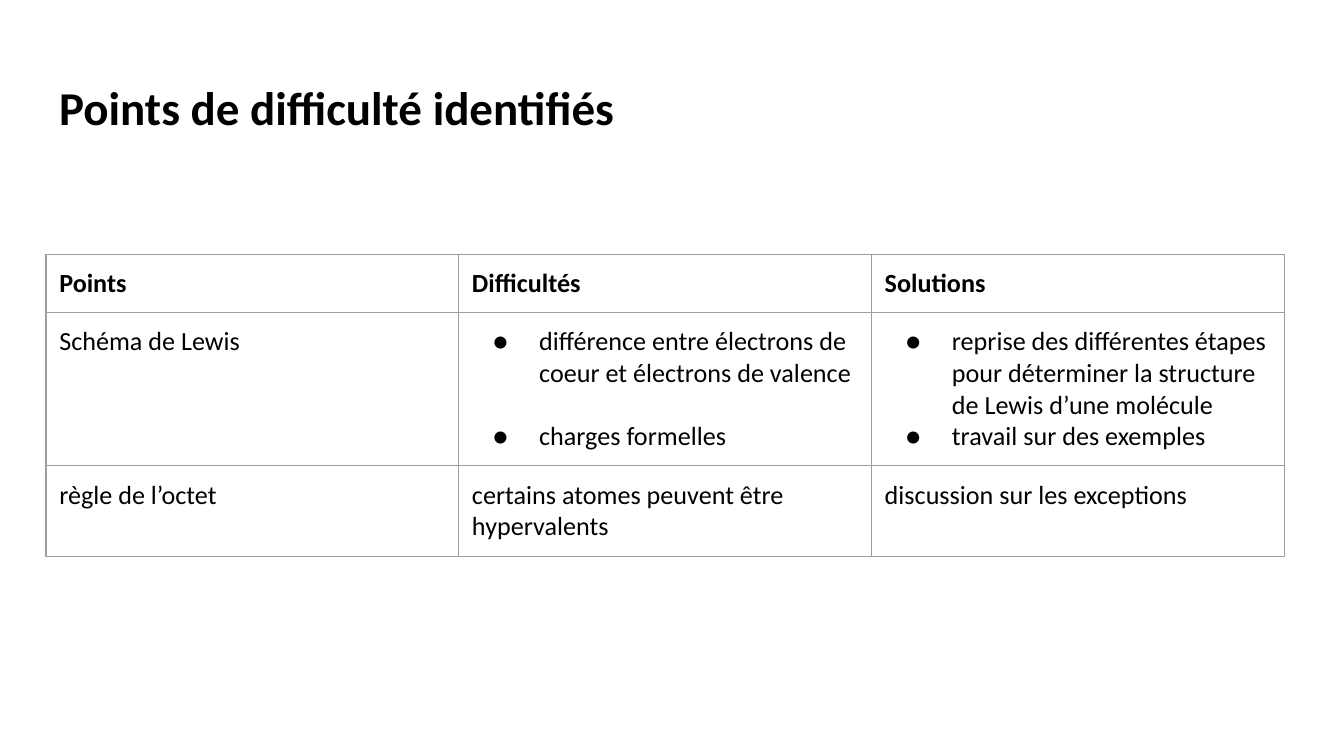
"""Build a slide with a table of chemistry difficulties and their solutions."""
import pptx
import pptx.dml.color
import pptx.oxml
import pptx.oxml.ns
import pptx.util

Cm = pptx.util.Cm
Pt = pptx.util.Pt

TITLE = "Points de difficulté identifiés"
HEADERS = ["Points", "Difficultés", "Solutions"]
ROWS = [
    [
        "Schéma de Lewis",
        ["différence entre électrons de coeur et électrons de valence", "charges formelles"],
        [
            "reprise des différentes étapes pour déterminer la structure de Lewis d’une molécule",
            "travail sur des exemples",
        ],
    ],
    ["règle de l’octet", "certains atomes peuvent être hypervalents", "discussion sur les exceptions"],
]
ITEM_GAPS = {(1, 1): 17}
LEFT = Cm(0.87)
COLUMN_WIDTH = Cm(7.8)
ROW_HEIGHTS = [Cm(1.1), Cm(2.9), Cm(1.71)]
INSET = Cm(0.25)
BLACK, GREY = "000000", "9E9E9E"


def color(value):
    return pptx.dml.color.RGBColor.from_string(value)


def add_xml(parent, body):
    namespaces = pptx.oxml.ns.nsdecls("a")
    tag, rest = body[1:].split(" ", 1)
    parent.append(pptx.oxml.parse_xml(f"<{tag} {namespaces} {rest}"))


def write_text(frame, text, size=14, bold=False, gap=0):
    frame.word_wrap = True
    bulleted = isinstance(text, list)
    for index, item in enumerate(text if bulleted else [text]):
        paragraph = frame.paragraphs[0] if index == 0 else frame.add_paragraph()
        paragraph.space_before = Pt(gap if index else 0)
        if bulleted:
            properties = paragraph._p.get_or_add_pPr()
            properties.set("marL", str(Cm(1.27)))
            properties.set("indent", str(-Cm(0.88)))
            add_xml(properties, f'<a:buClr ><a:srgbClr val="{BLACK}"/></a:buClr>')
            add_xml(properties, '<a:buFont typeface="Calibri"/>')
            add_xml(properties, '<a:buChar char="●"/>')
        run = paragraph.add_run()
        run.text = item
        run.font.name = "Calibri"
        run.font.size = Pt(size)
        run.font.bold = bold
        run.font.color.rgb = color(BLACK)


def set_insets(target):
    target.margin_left = target.margin_right = INSET
    target.margin_top = target.margin_bottom = INSET


def style_cell(cell):
    set_insets(cell)
    properties = cell._tc.get_or_add_tcPr()
    for side in ("lnL", "lnR", "lnT", "lnB"):
        add_xml(
            properties,
            f'<a:{side} w="{Pt(0.75)}"><a:solidFill><a:srgbClr val="{GREY}"/>'
            f"</a:solidFill></a:{side}>",
        )
    cell.fill.background()


def add_table(slide):
    content = [HEADERS] + ROWS
    shape = slide.shapes.add_table(
        len(content), len(HEADERS), LEFT, Cm(4.8),
        COLUMN_WIDTH * len(HEADERS), sum(ROW_HEIGHTS),
    )
    table = shape.table
    table.horz_banding = False
    for column in table.columns:
        column.width = COLUMN_WIDTH
    for row_index, (height, texts) in enumerate(zip(ROW_HEIGHTS, content)):
        table.rows[row_index].height = height
        for column_index, text in enumerate(texts):
            cell = table.cell(row_index, column_index)
            style_cell(cell)
            gap = ITEM_GAPS.get((row_index, column_index), 0)
            write_text(cell.text_frame, text, bold=row_index == 0, gap=gap)


def main():
    presentation = pptx.Presentation()
    presentation.slide_width, presentation.slide_height = Cm(25.4), Cm(14.28)
    slide = presentation.slides.add_slide(presentation.slide_layouts[6])
    title = slide.shapes.add_textbox(LEFT, Cm(1.24), Cm(23.67), Cm(1.6))
    set_insets(title.text_frame)
    write_text(title.text_frame, TITLE, size=25.2, bold=True)
    add_table(slide)
    presentation.save("out.pptx")


if __name__ == "__main__":
    main()
